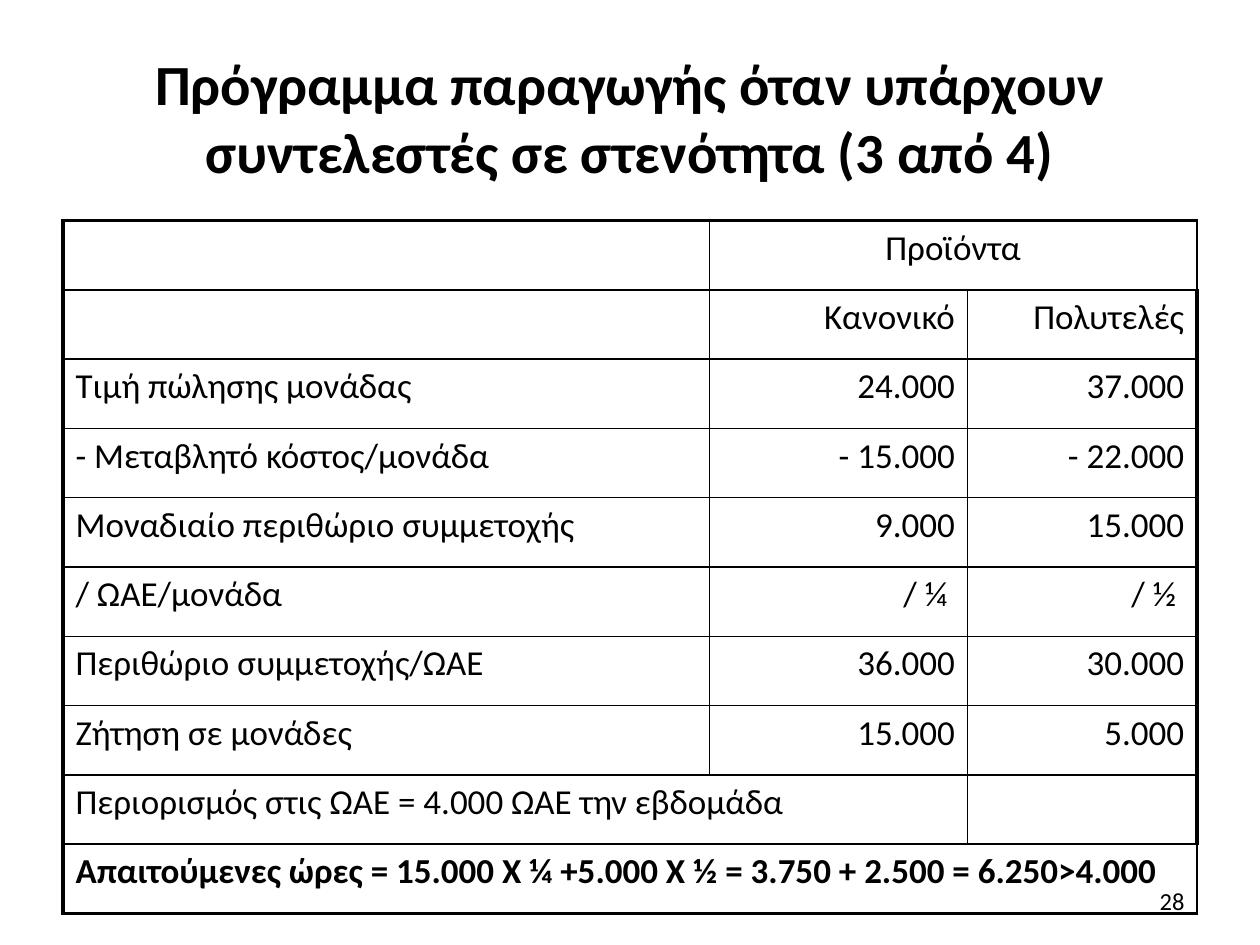
from lxml.etree import SubElement
from pptx import Presentation
from pptx.dml.color import RGBColor
from pptx.enum.text import MSO_ANCHOR, PP_ALIGN
from pptx.oxml.ns import qn
from pptx.util import Inches, Pt

COLORS = {"text": "000000", "border": "000000", "background": "FFFFFF"}
FONT = "Calibri"
THIN, THICK = 1, 2.25

TITLE = "Πρόγραμμα παραγωγής όταν υπάρχουν συντελεστές σε στενότητα (3 από 4)"
COLUMN_WIDTHS = [5.13, 2.05, 1.82]
ROW_HEIGHT = 0.55
ROWS = [
    ["", "Προϊόντα", ""],
    ["", "Κανονικό", "Πολυτελές"],
    ["Τιμή πώλησης μονάδας", "24.000", "37.000"],
    ["- Μεταβλητό κόστος/μονάδα", "- 15.000", "- 22.000"],
    ["Μοναδιαίο περιθώριο συμμετοχής", "9.000", "15.000"],
    ["/ ΩΑΕ/μονάδα", "/ ¼ ", "/ ½ "],
    ["Περιθώριο συμμετοχής/ΩΑΕ", "36.000", "30.000"],
    ["Ζήτηση σε μονάδες", "15.000", "5.000"],
    ["Περιορισμός στις ΩΑΕ = 4.000 ΩΑΕ την εβδομάδα", "", ""],
    ["Απαιτούμενες ώρες = 15.000 Χ ¼ +5.000 Χ ½ = 3.750 + 2.500 = 6.250>4.000", "", ""],
]
# Row, first column and last column of each merged cell
MERGES = [(0, 1, 2), (8, 0, 1), (9, 0, 2)]


def write_text(frame, text, size, align, bold=False):
    frame.text = text
    para = frame.paragraphs[0]
    para.alignment = align
    for span in para.runs:
        span.font.name = FONT
        span.font.size = Pt(size)
        span.font.bold = bold
        span.font.color.rgb = RGBColor.from_string(COLORS["text"])


def add_text(page, text, left, top, width, height, size, align, bold=False):
    box = page.shapes.add_textbox(Inches(left), Inches(top), Inches(width), Inches(height))
    box.text_frame.word_wrap = True
    box.text_frame.vertical_anchor = MSO_ANCHOR.MIDDLE
    write_text(box.text_frame, text, size, align, bold)


def set_borders(cell, widths):
    """Draw the borders; widths maps each side (L, R, T, B) to points."""
    properties = cell._tc.get_or_add_tcPr()
    for side, width in widths.items():
        line = SubElement(properties, qn(f"a:ln{side}"), w=str(Pt(width)))
        fill = SubElement(line, qn("a:solidFill"))
        SubElement(fill, qn("a:srgbClr"), val=COLORS["border"])


def add_product_table(page, left, top):
    row_count, column_count = len(ROWS), len(COLUMN_WIDTHS)
    table = page.shapes.add_table(
        row_count, column_count, Inches(left), Inches(top),
        Inches(sum(COLUMN_WIDTHS)), Inches(ROW_HEIGHT * row_count),
    ).table
    table.first_row = table.horz_banding = False
    for column, width in zip(table.columns, COLUMN_WIDTHS):
        column.width = Inches(width)

    last_row, last_column = row_count - 1, column_count - 1
    for r, values in enumerate(ROWS):
        table.rows[r].height = Inches(ROW_HEIGHT)
        for c, value in enumerate(values):
            cell = table.cell(r, c)
            # Thick frame around the table, thin lines inside
            set_borders(cell, {
                "L": THICK if c == 0 else THIN,
                "R": THICK if c == last_column else THIN,
                "T": THICK if r == 0 else THIN,
                "B": THICK if r == last_row else THIN,
            })
            cell.fill.background()
            if c == 0:
                align = PP_ALIGN.LEFT
            else:
                align = PP_ALIGN.CENTER if r == 0 else PP_ALIGN.RIGHT
            write_text(cell.text_frame, value, 20, align, bold=r == last_row)
            if not value:
                cell.text_frame.paragraphs[0].font.size = Pt(20)

    for r, first, last in MERGES:
        table.cell(r, first).merge(table.cell(r, last))


def main():
    deck = Presentation()
    deck.slide_width, deck.slide_height = Inches(10), Inches(7.5)
    page = deck.slides.add_slide(deck.slide_layouts[6])
    page.background.fill.solid()
    page.background.fill.fore_color.rgb = RGBColor.from_string(COLORS["background"])

    # Title
    add_text(page, TITLE, 0.5, 0.3, 9, 1.25, 32.4, PP_ALIGN.CENTER, bold=True)
    # Product figures
    add_product_table(page, 0.5, 1.75)
    # Page number
    add_text(page, "28", 7.17, 6.95, 2.33, 0.4, 14, PP_ALIGN.RIGHT)

    deck.save("out.pptx")


if __name__ == "__main__":
    main()
